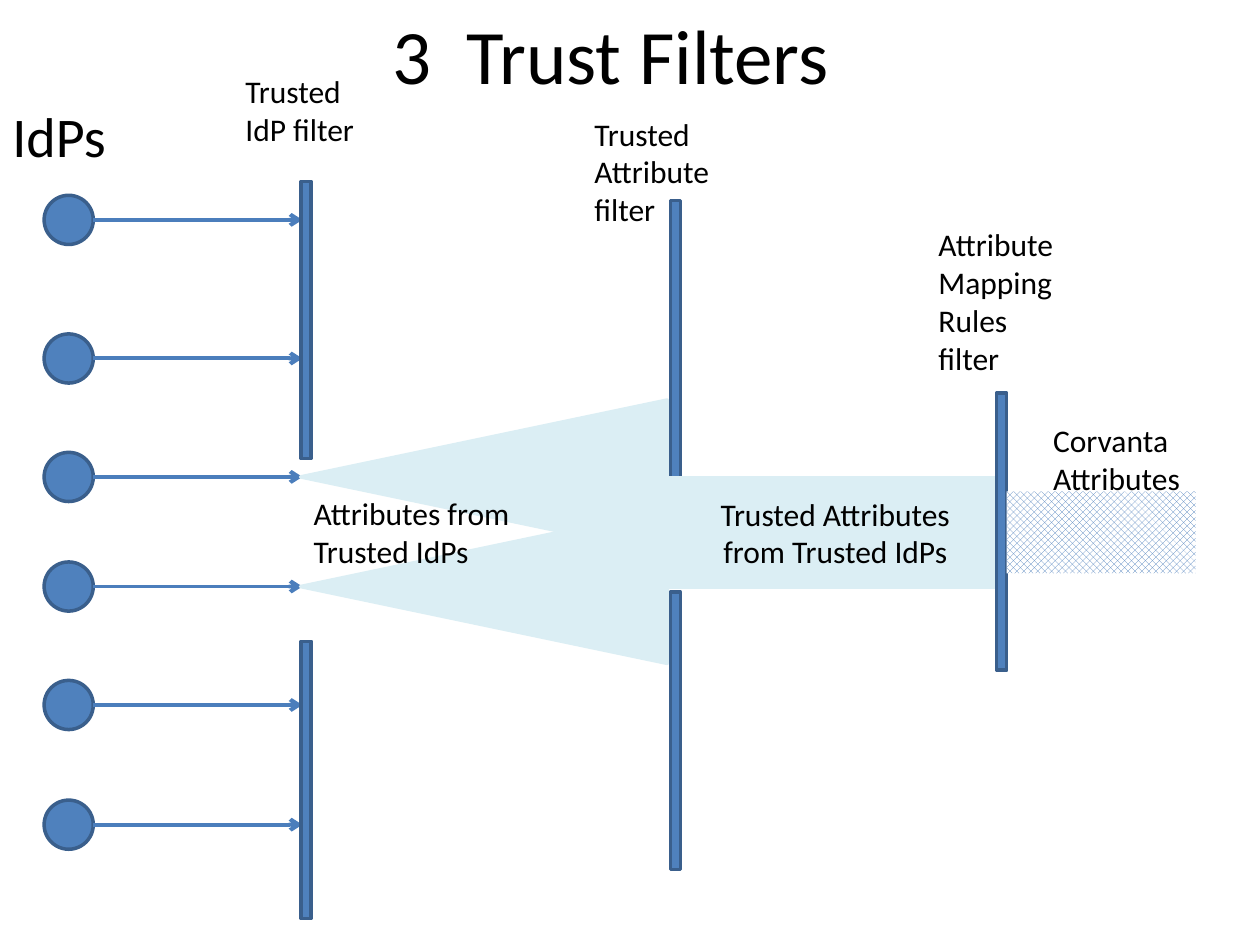
from dataclasses import dataclass

from lxml import etree
from pptx import Presentation
from pptx.dml.color import RGBColor
from pptx.enum.dml import MSO_PATTERN
from pptx.enum.shapes import MSO_CONNECTOR, MSO_SHAPE
from pptx.enum.text import MSO_ANCHOR, MSO_AUTO_SIZE, PP_ALIGN
from pptx.oxml.ns import qn
from pptx.util import Inches, Pt

RECTANGLE = MSO_SHAPE.RECTANGLE
OVAL = MSO_SHAPE.OVAL
TRIANGLE = MSO_SHAPE.ISOSCELES_TRIANGLE
STRAIGHT = MSO_CONNECTOR.STRAIGHT
DIAMONDS = MSO_PATTERN.SOLID_DIAMOND
MIDDLE = MSO_ANCHOR.MIDDLE
CENTER = PP_ALIGN.CENTER
LEFT = PP_ALIGN.LEFT
GROW = MSO_AUTO_SIZE.SHAPE_TO_FIT_TEXT

FONT = "Calibri"
BLACK = "000000"
WHITE = "FFFFFF"
BLUE = "4F81BD"
DARK_BLUE = "3A5F8C"
ARROW_BLUE = "4B7EBC"
PALE_BLUE = "DBEEF4"

CIRCLE_LEFT = 0.35
CIRCLE_SIZE = 0.39
ARROW_END = 2.4
BAR_WIDTH = 0.08
BAR_HEIGHT = 2.2


@dataclass
class Box:
    left: float
    top: float
    width: float
    height: float

    def lengths(self) -> tuple:
        """Return the four measures as lengths."""
        return tuple(Inches(v) for v in (self.left, self.top, self.width, self.height))


@dataclass
class Label:
    text: str
    box: Box
    size: int = 18
    wrap: bool = False


IDP_TOPS = [1.55, 2.65, 3.59, 4.46, 5.4, 6.35]
IDP_BARS = [(2.39, 1.44), (2.39, 5.09)]
ATTRIBUTE_BARS = [(5.32, 1.59), (5.32, 4.7)]
MAPPING_BARS = [(7.91, 3.12)]
BEAMS = [Box(3.23, 2.33, 1.22, 2.91), Box(3.23, 3.2, 1.22, 2.91)]
LABELS = [
    Label("IdPs", Box(0, 0.76, 0.95, 0.64), size=32),
    Label("Trusted\nIdP filter", Box(1.85, 0.52, 1.07, 0.71)),
    Label("Trusted\nAttribute\nfilter", Box(4.62, 0.86, 1.13, 1.01)),
    Label("Attribute\nMapping\nRules\nfilter", Box(7.35, 1.74, 1.13, 1.31)),
    Label("Corvanta\nAttributes", Box(8.26, 3.29, 1.26, 0.71), wrap=True),
    Label("Attributes from\nTrusted IdPs", Box(2.39, 3.87, 1.78, 0.71)),
]


def color(value: str) -> RGBColor:
    """Turn a hex string into a colour."""
    return RGBColor.from_string(value)


def write(shape, text: str, size: int, alignment=LEFT) -> None:
    """Set the text of a shape and format its runs."""
    shape.text_frame.text = text
    for paragraph in shape.text_frame.paragraphs:
        paragraph.alignment = alignment
        for run in paragraph.runs:
            run.font.name = FONT
            run.font.size = Pt(size)
            run.font.color.rgb = color(BLACK)


def add_block(shapes, kind, box: Box, fill: str = BLUE, line: str = DARK_BLUE):
    """Add a filled and outlined preset shape."""
    shape = shapes.add_shape(kind, *box.lengths())
    shape.shadow.inherit = False
    shape.fill.solid()
    shape.fill.fore_color.rgb = color(fill)
    shape.line.color.rgb = color(line)
    shape.line.width = Pt(2)
    return shape


def add_arrow(shapes, start: float, end: float, y: float) -> None:
    """Add a level arrow pointing right."""
    arrow = shapes.add_connector(STRAIGHT, Inches(start), Inches(y), Inches(end), Inches(y))
    arrow.line.color.rgb = color(ARROW_BLUE)
    arrow.line.width = Pt(2.25)
    etree.SubElement(arrow.line._get_or_add_ln(), qn("a:tailEnd"), type="arrow")
    etree.SubElement(arrow._element.spPr, qn("a:effectLst"))


def add_idp(slide, top: float) -> None:
    """Add a grouped identity provider circle and its arrow."""
    group = slide.shapes.add_group_shape()
    add_block(group.shapes, OVAL, Box(CIRCLE_LEFT, top, CIRCLE_SIZE, CIRCLE_SIZE))
    add_arrow(group.shapes, CIRCLE_LEFT + CIRCLE_SIZE, ARROW_END, top + CIRCLE_SIZE / 2)


def add_bars(slide, corners: list[tuple[float, float]]) -> None:
    """Add the upright bars of one filter."""
    for left, top in corners:
        add_block(slide.shapes, RECTANGLE, Box(left, top, BAR_WIDTH, BAR_HEIGHT))


def add_label(slide, label: Label) -> None:
    """Add a text box."""
    text_box = slide.shapes.add_textbox(*label.box.lengths())
    text_box.text_frame.word_wrap = label.wrap
    text_box.text_frame.auto_size = GROW
    write(text_box, label.text, label.size)


def add_title(slide) -> None:
    """Place and fill the title."""
    title = slide.shapes.title
    title.left, title.top, title.width, title.height = Box(0.35, 0, 9, 0.85).lengths()
    title.text_frame.vertical_anchor = MIDDLE
    write(title, "3  Trust Filters", 44, CENTER)


def add_trusted_band(slide) -> None:
    """Add the band of attributes that pass the second filter."""
    band = add_block(slide.shapes, RECTANGLE, Box(5.31, 3.79, 2.64, 0.87), PALE_BLUE, PALE_BLUE)
    band.text_frame.vertical_anchor = MIDDLE
    write(band, "Trusted Attributes\nfrom Trusted IdPs", 18, CENTER)


def add_mapped_band(slide) -> None:
    """Add the patterned band of mapped attributes."""
    band = add_block(slide.shapes, RECTANGLE, Box(7.99, 3.9, 1.5, 0.65))
    band.fill.patterned()
    band.fill.pattern = DIAMONDS
    band.fill.fore_color.rgb = color(BLUE)
    band.fill.back_color.rgb = color(WHITE)
    band.line.fill.background()


def main() -> None:
    """Build the slide and save it."""
    presentation = Presentation()
    presentation.slide_width = Inches(10)
    presentation.slide_height = Inches(7.5)
    slide = presentation.slides.add_slide(presentation.slide_layouts[5])
    add_title(slide)
    for top in IDP_TOPS:
        add_idp(slide, top)
    add_bars(slide, IDP_BARS)
    for box in BEAMS:
        beam = add_block(slide.shapes, TRIANGLE, box, PALE_BLUE, PALE_BLUE)
        beam.rotation = 270
    add_bars(slide, ATTRIBUTE_BARS)
    add_trusted_band(slide)
    add_bars(slide, MAPPING_BARS)
    add_mapped_band(slide)
    for label in LABELS:
        add_label(slide, label)
    presentation.save("out.pptx")


if __name__ == "__main__":
    main()
